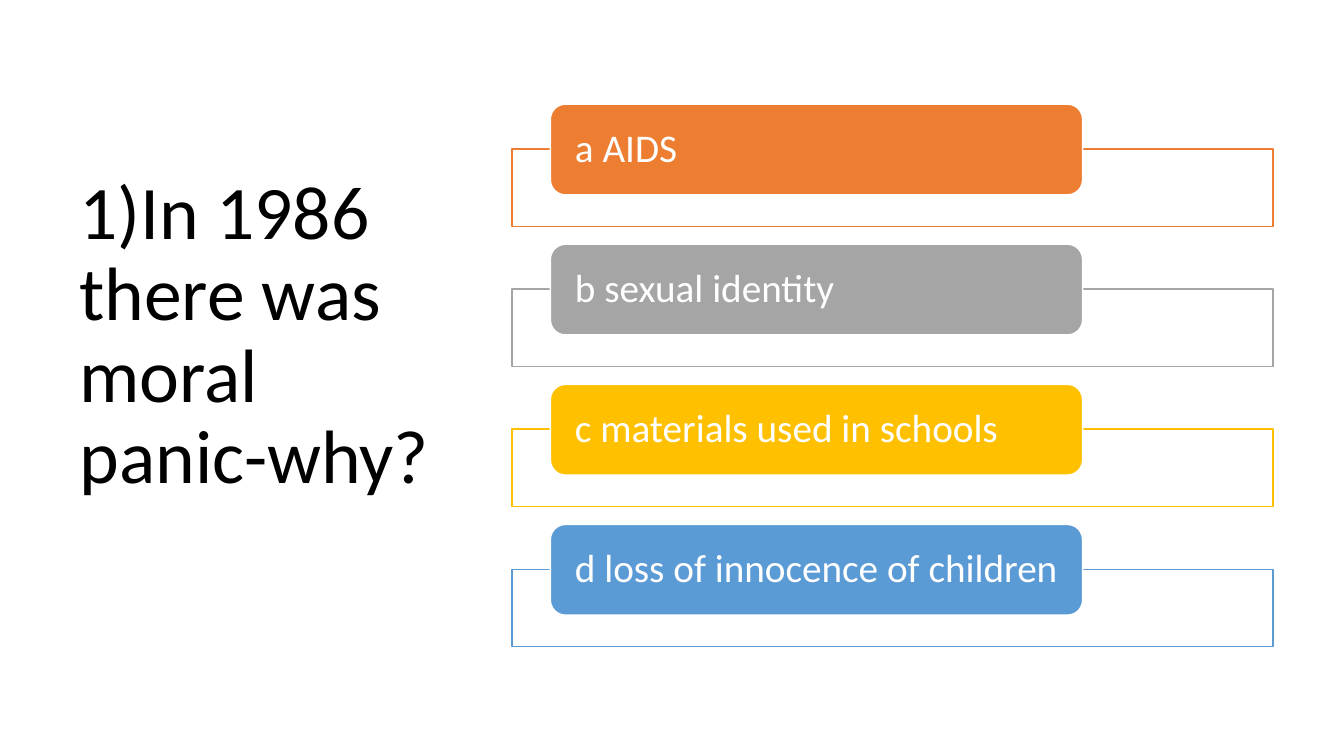
from pptx import Presentation
from pptx.dml.color import RGBColor
from pptx.enum.shapes import MSO_SHAPE
from pptx.enum.text import MSO_ANCHOR, PP_ALIGN
from pptx.util import Pt


def color(value):
    return RGBColor.from_string(value)


def write_text(shape, text, size, text_color, margins):
    frame = shape.text_frame
    frame_format = {"word_wrap": True, "vertical_anchor": MSO_ANCHOR.MIDDLE}
    for side, margin in margins.items():
        frame_format["margin_" + side] = Pt(margin)
    for name, value in frame_format.items():
        setattr(frame, name, value)
    paragraph = frame.paragraphs[0]
    paragraph.text = text
    for name, value in {"alignment": PP_ALIGN.LEFT, "line_spacing": 0.9}.items():
        setattr(paragraph, name, value)
    font = paragraph.runs[0].font
    for name, value in {"name": "Calibri", "size": Pt(size)}.items():
        setattr(font, name, value)
    font.color.rgb = color(text_color)


presentation = Presentation()
presentation.slide_width = Pt(960)
presentation.slide_height = Pt(540)
slide = presentation.slides.add_slide(presentation.slide_layouts[6])

# Question, raised by one line through the bottom margin
question = slide.shapes.add_textbox(Pt(49.7), Pt(50.4), Pt(269.3), Pt(439.9))
write_text(question, "1)In 1986 there was moral panic-why?", 54, "000000",
           {"left": 7.2, "top": 3.6, "right": 7.2, "bottom": 62.8})

# Answers: an outlined panel with a coloured label over its top edge
answers = [
    ("a AIDS", "ED7D31"),
    ("b sexual identity", "A5A5A5"),
    ("c materials used in schools", "FFC000"),
    ("d loss of innocence of children", "5B9BD5"),
]
first_top = 74.4
row_pitch = 100.08
for row, (answer, accent) in enumerate(answers):
    top = first_top + row * row_pitch
    parts = [
        (MSO_SHAPE.RECTANGLE, (365.8, top + 32, 543.6, 55.4), "FFFFFF", accent),
        (MSO_SHAPE.ROUNDED_RECTANGLE, (393.1, top, 380.2, 64.8), accent, "FFFFFF"),
    ]
    for preset, place, fill_color, line_color in parts:
        shape = slide.shapes.add_shape(preset, *[Pt(length) for length in place])
        shape.shadow.inherit = False
        shape.fill.solid()
        shape.fill.fore_color.rgb = color(fill_color)
        shape.line.color.rgb = color(line_color)
        shape.line.width = Pt(1)
    # The label is the last part drawn in each row
    write_text(shape, answer, 28, "FFFFFF",
               {"left": 14.4, "top": 0, "right": 7.2, "bottom": 0})

presentation.save("out.pptx")
